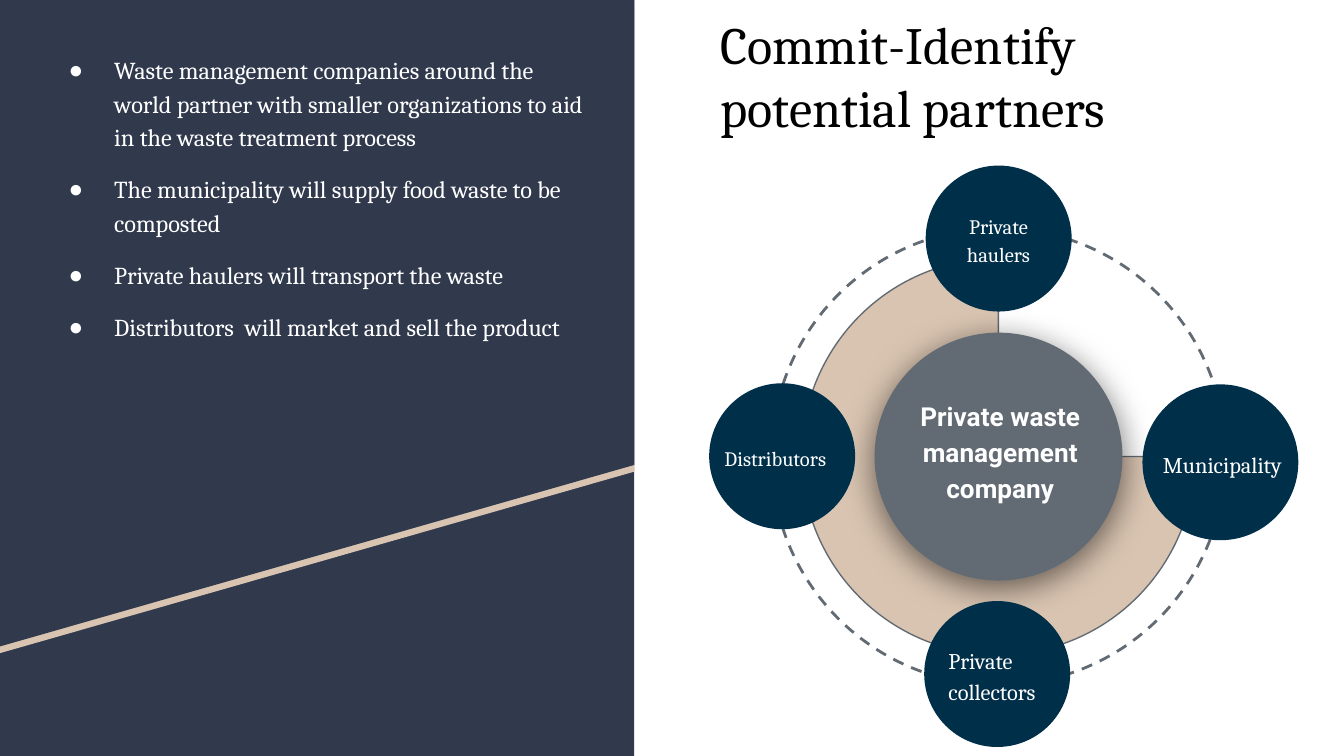
import dataclasses

import lxml.etree
import pptx
import pptx.dml.color
import pptx.enum.dml
import pptx.enum.shapes
import pptx.enum.text
import pptx.oxml
import pptx.oxml.ns
import pptx.util

Pt = pptx.util.Pt
SHAPE = pptx.enum.shapes.MSO_SHAPE
ALIGN = pptx.enum.text.PP_ALIGN
ANCHOR = pptx.enum.text.MSO_ANCHOR


@dataclasses.dataclass(frozen=True)
class Theme:
    """Colours, fonts and type sizes of the deck."""
    panel: str = "31394D"
    sand: str = "D9C4B1"
    slate: str = "626B73"
    navy: str = "002F4A"
    white: str = "FFFFFF"
    black: str = "000000"
    serif: str = "Cambria"
    sans: str = "Roboto"
    title: int = 28
    hub: int = 14
    body: int = 13
    label: int = 12
    small: int = 11


THEME = Theme()
PANEL_WIDTH = 339.8
CENTER = (534.9, 244.6)
BULLETS = (
    "Waste management companies around the world partner with smaller organizations to aid in the waste treatment process",
    "The municipality will supply food waste to be composted",
    "Private haulers will transport the waste",
    "Distributors  will market and sell the product",
)


def rgb(value):
    """Turn a hex string into a colour."""
    return pptx.dml.color.RGBColor.from_string(value)


def paint(shape, fill=None, line=None, weight=1):
    """Set fill and outline, and drop the inherited shadow."""
    shape.shadow.inherit = False
    if fill:
        shape.fill.solid()
        shape.fill.fore_color.rgb = rgb(fill)
    else:
        shape.fill.background()
    if line:
        shape.line.color.rgb = rgb(line)
        shape.line.width = Pt(weight)
    else:
        shape.line.fill.background()


def add_centered(shapes, kind, center, width, height, **style):
    """Add a painted preset shape around a centre point."""
    left, top = center[0] - width / 2, center[1] - height / 2
    shape = shapes.add_shape(kind, Pt(left), Pt(top), Pt(width), Pt(height))
    paint(shape, **style)
    return shape


def add_polygon(shapes, corners, fill):
    """Add a filled closed outline through the corners."""
    points = [(Pt(x), Pt(y)) for x, y in corners]
    builder = shapes.build_freeform(*points[0])
    builder.add_line_segments(points[1:], close=True)
    paint(builder.convert_to_shape(), fill=fill)


def write(box, lines, *, size, font=THEME.serif, color=THEME.white, bold=False,
          align=ALIGN.LEFT, anchor=ANCHOR.TOP, spacing=1.15, gap=0):
    """Fill a text frame with one formatted paragraph per line."""
    frame = box.text_frame
    frame.word_wrap = True
    frame.auto_size = pptx.enum.text.MSO_AUTO_SIZE.NONE
    frame.vertical_anchor = anchor
    frame.margin_left = frame.margin_right = Pt(7.2)
    frame.margin_top = frame.margin_bottom = Pt(7.2)
    for index, line in enumerate(lines):
        para = frame.add_paragraph() if index else frame.paragraphs[0]
        para.alignment = align
        para.line_spacing = spacing
        para.space_before = Pt(gap if index else 0)
        para.space_after = Pt(0)
        span = para.add_run()
        span.text = line
        span.font.size = Pt(size)
        span.font.name = font
        span.font.bold = bold
        span.font.color.rgb = rgb(color)


def add_bullet(para, color):
    """Give a paragraph a round bullet with a hanging indent."""
    properties = para._p.get_or_add_pPr()
    properties.set("marL", str(Pt(36)))
    properties.set("indent", str(Pt(-24.5)))
    space = pptx.oxml.ns.nsdecls("a")
    for markup in (f'<a:buClr {space}><a:srgbClr val="{color}"/></a:buClr>',
                   f'<a:buChar {space} char="●"/>'):
        properties.append(pptx.oxml.parse_xml(markup))


def add_shadow(shape, color):
    """Put a soft shadow straight below a shape."""
    tag = pptx.oxml.ns.qn
    effects = shape._element.spPr.find(tag("a:effectLst"))
    shadow = lxml.etree.SubElement(effects, tag("a:outerShdw"), blurRad=str(Pt(18)),
                                   dist=str(Pt(4)), dir="5400000", algn="bl", rotWithShape="0")
    tint = lxml.etree.SubElement(shadow, tag("a:srgbClr"), val=color)
    lxml.etree.SubElement(tint, tag("a:alpha"), val="55000")


def add_node(page, text, center, diameter, label_size, shift=(0, 0), fill=THEME.navy,
             align=ALIGN.CENTER, **text_format):
    """Add a circle grouped with its label and return the circle."""
    group = page.shapes.add_group_shape()
    circle = add_centered(group.shapes, SHAPE.OVAL, center, diameter, diameter, fill=fill)
    width, height = label_size
    left = center[0] + shift[0] - width / 2
    top = center[1] + shift[1] - height / 2
    label = group.shapes.add_textbox(Pt(left), Pt(top), Pt(width), Pt(height))
    write(label, [text], align=align, anchor=ANCHOR.MIDDLE, **text_format)
    return circle


def place(page, holder, left, top, width, height):
    """Move a placeholder and bring it to the front."""
    holder.left, holder.top = Pt(left), Pt(top)
    holder.width, holder.height = Pt(width), Pt(height)
    page.shapes.element.append(holder.element)


def add_panel(page):
    """Draw the dark left panel with its slanted stripe."""
    base = page.shapes.add_shape(SHAPE.RECTANGLE, 0, 0, Pt(PANEL_WIDTH), Pt(405))
    paint(base, fill=THEME.panel)
    for top, fill in ((3.6, THEME.sand), (0, THEME.panel)):
        corners = ((0, top), (PANEL_WIDTH, top), (PANEL_WIDTH, top + 249.1), (0, top + 346.3))
        add_polygon(page.shapes, corners, fill)


def add_copy(page):
    """Fill the title and the bullet list."""
    title, body = page.shapes.title, page.placeholders[1]
    place(page, title, 378.7, -0.7, 302.4, 85)
    write(title, ["Commit-Identify potential partners"], size=THEME.title,
          color=THEME.black, spacing=1)
    place(page, body, 18, 20.2, 302.4, 341.3)
    write(body, BULLETS, size=THEME.body, gap=10)
    for para in body.text_frame.paragraphs:
        add_bullet(para, THEME.white)


def add_diagram(page):
    """Draw the orbit, the three-quarter disc, the hub and the partners."""
    orbit = add_centered(page.shapes, SHAPE.OVAL, CENTER, 244.8, 243.4,
                         line=THEME.slate, weight=1.5)
    orbit.line.dash_style = pptx.enum.dml.MSO_LINE.DASH
    orbit.rotation = 270
    disc = add_centered(page.shapes, SHAPE.PIE, CENTER, 211, 212.4,
                        fill=THEME.sand, line=THEME.slate, weight=0.75)
    disc.adjustments[0], disc.adjustments[1] = 0, 270 * 0.6
    hub = add_node(page, "Private waste management company", CENTER, 132.8, (116, 103),
                   shift=(1, -3.8), fill=THEME.slate, size=THEME.hub, font=THEME.sans, bold=True)
    add_shadow(hub, THEME.black)
    add_node(page, "Private haulers", (535, 127.8), 78.2, (55.4, 54), size=THEME.small)
    add_node(page, "Private collectors", (534.2, 361.1), 78.2, (74.9, 54), shift=(4.3, 0),
             align=ALIGN.LEFT, size=THEME.label)
    add_node(page, "Distributors", (419, 244.4), 78.2, (85, 54), shift=(-3.6, 0),
             size=THEME.small)
    add_node(page, "Municipality", (653.8, 247.7), 83.5, (97.2, 56.9), shift=(1.1, 0),
             size=THEME.label)


def main():
    """Build the slide and save the deck."""
    deck = pptx.Presentation()
    deck.slide_width, deck.slide_height = Pt(720), Pt(405)
    page = deck.slides.add_slide(deck.slide_layouts[1])
    add_panel(page)
    add_copy(page)
    add_diagram(page)
    deck.save("out.pptx")


if __name__ == "__main__":
    main()
